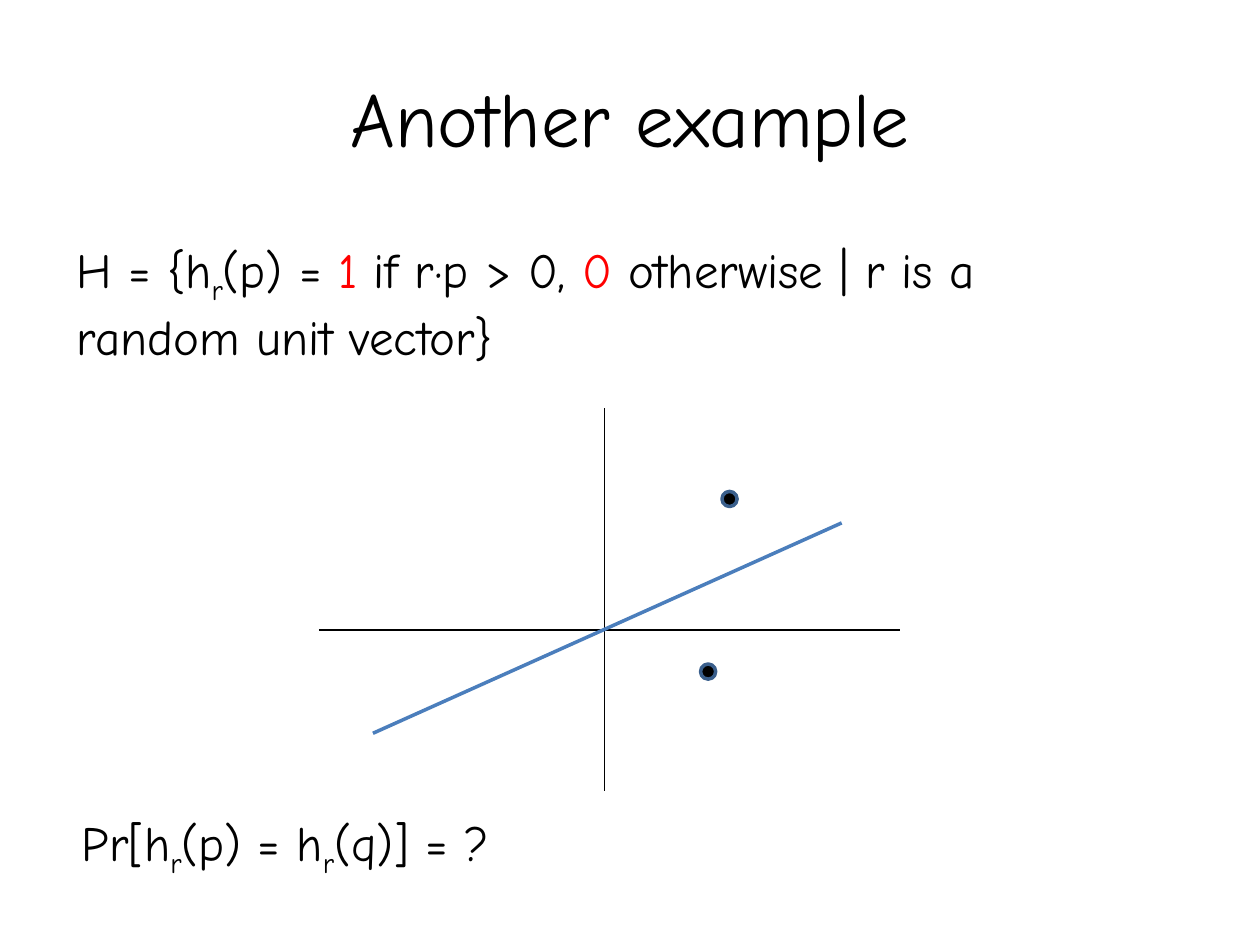
from dataclasses import dataclass

from lxml import etree
from pptx import Presentation
from pptx import util as u
from pptx.dml.color import RGBColor as Rgb
from pptx.enum import shapes, text
from pptx.oxml.ns import qn


@dataclass(frozen=True)
class Theme:
    face: str = "Comic Neue"
    ink: str = "000000"
    mark: str = "FF0000"
    line: str = "4B7EBC"
    rim: str = "3A5F8C"
    head: int = 44
    body: int = 28
    thin: float = 0.75
    bold: float = 2


THEME = Theme()
COLS, ROWS = 100, 75
CELL = u.Inches(0.1)


def grid(*cells):
    return [round(n * CELL) for n in cells]


def title(slide, box, words):
    para = frame(slide, box, text.MSO_ANCHOR.MIDDLE).paragraphs[0]
    para.alignment = text.PP_ALIGN.CENTER
    fill(para, [(words, "")], THEME.head)


def formula(slide, box, parts):
    fill(frame(slide, box, text.MSO_ANCHOR.TOP).paragraphs[0], parts, THEME.body)


def frame(slide, box, anchor):
    body = slide.shapes.add_textbox(*grid(*box)).text_frame
    body.word_wrap = True
    body.vertical_anchor = anchor
    return body


def fill(para, parts, size):
    """Add (words, style) runs; style is "", "sub" or "mark"."""
    para.font.name = THEME.face
    para.font.size = u.Pt(size)
    para.font.color.rgb = Rgb.from_string(THEME.ink)
    for words, style in parts:
        run = para.add_run()
        run.text = words
        if style == "sub":
            run._r.get_or_add_rPr().set("baseline", "-25000")
        elif style == "mark":
            run.font.color.rgb = Rgb.from_string(THEME.mark)


def plot(slide, box):
    """Draw axes, a dividing line and two points, in cells from the box corner."""
    left, top, width, height = box
    zero_x, zero_y = 22.7, 17.6
    dot = 1.2

    def stroke(x1, y1, x2, y2, color, weight):
        ends = grid(left + x1, top + y1, left + x2, top + y2)
        line = slide.shapes.add_connector(shapes.MSO_CONNECTOR.STRAIGHT, *ends)
        line.line.color.rgb = Rgb.from_string(color)
        line.line.width = u.Pt(weight)
        etree.SubElement(line._element.spPr, qn("a:effectLst"))

    def point(x, y):
        place = grid(left + x - dot / 2, top + y - dot / 2, dot, dot)
        mark = slide.shapes.add_shape(shapes.MSO_SHAPE.OVAL, *place)
        mark.shadow.inherit = False
        mark.fill.solid()
        mark.fill.fore_color.rgb = Rgb.from_string(THEME.ink)
        mark.line.color.rgb = Rgb.from_string(THEME.rim)
        mark.line.width = u.Pt(THEME.bold)

    stroke(0, zero_y, width, zero_y, THEME.ink, THEME.thin)
    stroke(zero_x, 0, zero_x, height, THEME.ink, THEME.thin)
    stroke(4.3, 25.8, 41.5, 9.1, THEME.line, THEME.bold)
    point(30.9, 20.9)
    point(32.6, 7.2)


def main():
    deck = Presentation()
    deck.slide_width, deck.slide_height = grid(COLS, ROWS)
    slide = deck.slides.add_slide(deck.slide_layouts[6])
    title(slide, (5, 3, 90, 12.5), "Another example")
    formula(slide, (5.1, 18.5, 83.6, 10.4), [
        ("H = {h", ""), ("r", "sub"), ("(p) = ", ""), ("1", "mark"),
        (" if r·p > 0, ", ""), ("0", "mark"),
        (" otherwise | r is a random unit vector}", ""),
    ])
    plot(slide, (25.3, 32.4, 46.1, 30.4))
    formula(slide, (5.5, 64, 53.1, 5.7), [
        ("Pr[h", ""), ("r", "sub"), ("(p) = h", ""), ("r", "sub"),
        ("(q)] = ?", ""),
    ])
    deck.save("out.pptx")


if __name__ == "__main__":
    main()
